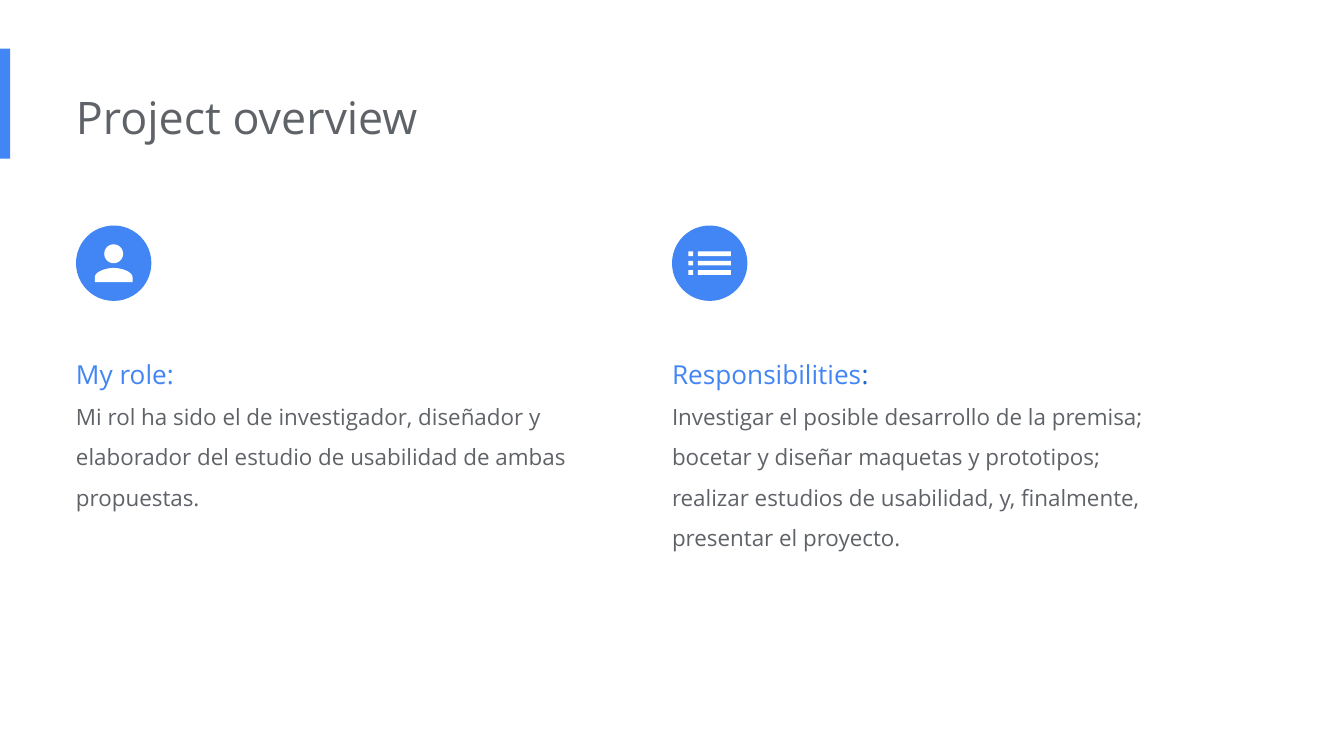
import math
from dataclasses import dataclass

from lxml import etree
from pptx import Presentation
from pptx.dml.color import RGBColor
from pptx.enum import shapes, text
from pptx.oxml.ns import qn
from pptx.util import Pt

BLUE = RGBColor(0x42, 0x85, 0xF4)
DARK_BLUE = RGBColor(0x19, 0x67, 0xD2)
GRAY = RGBColor(0x5F, 0x63, 0x68)
WHITE = RGBColor(0xFF, 0xFF, 0xFF)
FONT = "Open Sans"

LEFT = 40.7
BADGE_TOP, BADGE_SIZE = 120.8, 40.4
UNIT = BADGE_SIZE / 32  # icons sit on a 24-unit grid centred in the badge

Point = tuple[float, float]
Contour = list[Point]


@dataclass
class Column:
    left: float
    height: float
    heading: list[tuple[str, RGBColor]]
    body: str
    icon: list[Contour]


def circle(cx: float, cy: float, radius: float, steps: int = 48) -> Contour:
    angles = [2 * math.pi * i / steps for i in range(steps)]
    return [(cx + radius * math.cos(a), cy + radius * math.sin(a)) for a in angles]


def bezier(p0: Point, p1: Point, p2: Point, p3: Point, steps: int = 16) -> Contour:
    def at(t: float) -> Point:
        weights = ((1 - t) ** 3, 3 * t * (1 - t) ** 2, 3 * t * t * (1 - t), t ** 3)
        x, y = (sum(w * c for w, c in zip(weights, axis)) for axis in zip(p0, p1, p2, p3))
        return x, y
    return [at(i / steps) for i in range(steps + 1)]


def box(x: float, y: float, w: float, h: float) -> Contour:
    return [(x, y), (x + w, y), (x + w, y + h), (x, y + h)]


def person_icon() -> list[Contour]:
    left_shoulder = bezier((12, 14), (9.33, 14), (4, 15.34), (4, 18))
    right_shoulder = [(24 - x, y) for x, y in reversed(left_shoulder)]
    return [circle(12, 8, 4), left_shoulder + [(4, 20), (20, 20)] + right_shoulder]


def list_icon() -> list[Contour]:
    return [box(x, y, w, 2) for x, w in ((3, 2), (7, 14)) for y in (7, 11, 15)]


def paint(sp, color: RGBColor) -> None:
    sp.shadow.inherit = False
    sp.fill.solid()
    sp.fill.fore_color.rgb = color
    sp.line.fill.background()


def add_filled(slide, kind, left: float, top: float, width: float, height: float,
               color: RGBColor) -> None:
    sp = slide.shapes.add_shape(kind, Pt(left), Pt(top), Pt(width), Pt(height))
    paint(sp, color)


def add_icon(slide, contours: list[Contour], left: float, top: float) -> None:
    """Draw contours given in grid units, with the grid origin at left, top."""
    def place(point: Point) -> tuple[int, int]:
        return Pt(left + point[0] * UNIT), Pt(top + point[1] * UNIT)

    builder = None
    for contour in contours:
        first, *rest = map(place, contour)
        if builder is None:
            builder = slide.shapes.build_freeform(*first)
        else:
            builder.move_to(*first)
        builder.add_line_segments(rest, close=True)
    paint(builder.convert_to_shape(), WHITE)


def set_frame(sp, left: float, top: float, width: float, height: float):
    """Place a placeholder and return its text frame, top-anchored and unfitted."""
    sp.left, sp.top, sp.width, sp.height = Pt(left), Pt(top), Pt(width), Pt(height)
    tf = sp.text_frame
    tf.word_wrap = True
    tf.auto_size = text.MSO_AUTO_SIZE.NONE
    tf.vertical_anchor = text.MSO_ANCHOR.TOP
    tf.margin_left = 0
    tf.margin_top = tf.margin_right = tf.margin_bottom = Pt(7.2)
    return tf


def write(p, runs: list[tuple[str, RGBColor]], *, size: float, spacing: float = 1.0) -> None:
    pPr = p._p.get_or_add_pPr()
    pPr.set("marL", "0")
    pPr.set("indent", "0")
    etree.SubElement(pPr, qn("a:buNone"))
    p.alignment = text.PP_ALIGN.LEFT
    p.line_spacing = spacing
    p.space_before = p.space_after = Pt(0)
    for words, color in runs:
        r = p.add_run()
        r.text = words
        r.font.name = FONT
        r.font.size = Pt(size)
        r.font.color.rgb = color


def add_column(slide, sp, col: Column) -> None:
    tf = set_frame(sp, col.left, 176.4, 271.4, col.height)
    write(tf.paragraphs[0], col.heading, size=14, spacing=1.5)
    write(tf.add_paragraph(), [(col.body, GRAY)], size=12, spacing=1.5)
    add_filled(slide, shapes.MSO_SHAPE.OVAL, col.left, BADGE_TOP, BADGE_SIZE, BADGE_SIZE, BLUE)
    add_icon(slide, col.icon, col.left + 4 * UNIT, BADGE_TOP + 4 * UNIT)


COLUMNS = [
    Column(LEFT, 104.4, [("My role:", BLUE)],
           "Mi rol ha sido el de investigador, diseñador y elaborador del estudio "
           "de usabilidad de ambas propuestas.", person_icon()),
    Column(360, 126, [("Responsibilities", BLUE), (":", DARK_BLUE)],
           "Investigar el posible desarrollo de la premisa; bocetar y diseñar maquetas "
           "y prototipos; realizar estudios de usabilidad, y, finalmente, presentar "
           "el proyecto.", list_icon()),
]


def main() -> None:
    prs = Presentation()
    prs.slide_width, prs.slide_height = Pt(720), Pt(405)
    slide = prs.slides.add_slide(prs.slide_layouts.get_by_name("Two Content"))

    add_filled(slide, shapes.MSO_SHAPE.RECTANGLE, 0, 26, 5.5, 59, BLUE)
    title = set_frame(slide.shapes.title, LEFT, 41, 484.6, 43.2)
    write(title.paragraphs[0], [("Project overview", GRAY)], size=24)
    for idx, col in enumerate(COLUMNS, start=1):
        add_column(slide, slide.placeholders[idx], col)

    prs.save("out.pptx")


if __name__ == "__main__":
    main()
